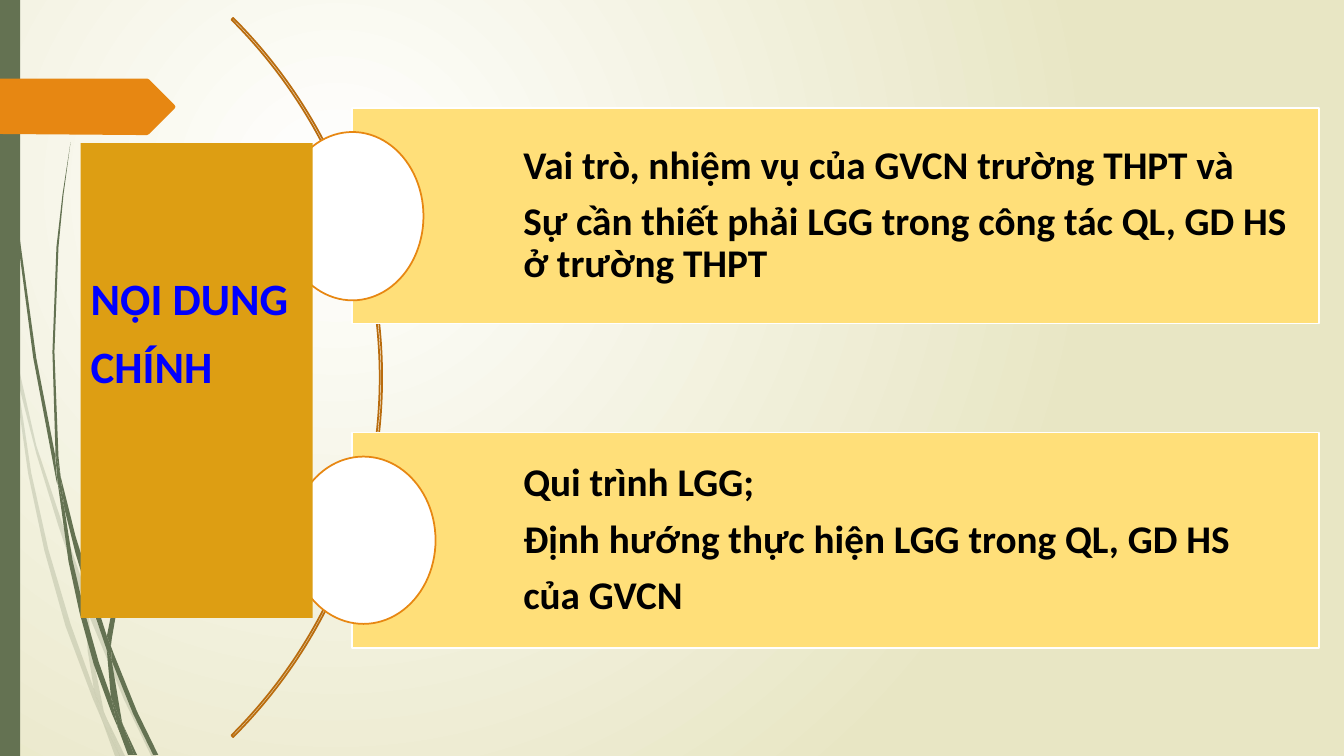
from lxml.etree import SubElement
from pptx import Presentation
from pptx.dml.color import RGBColor
from pptx.enum.shapes import MSO_SHAPE
from pptx.enum.text import MSO_ANCHOR, MSO_AUTO_SIZE, PP_ALIGN
from pptx.oxml.ns import qn
from pptx.util import Inches, Pt

COLORS = {
    "white": "FFFFFF", "cream": "E8E6C4", "green": "647252", "orange": "E78712",
    "arc": "B96C0E", "panel": "FFDF79", "gold": "DD9E13", "black": "000000", "blue": "0000FF",
}
LIGHT_BLADES = [
    [(0.11, 3.5), (0.09, 3.22), (0, 2.82), (0, 2.99), (0.1, 3.44)],
    [(0.58, 5.22), (0.84, 5.99), (0.85, 5.86), (0.62, 5.2), (0.36, 4.42), (0.14, 3.45),
     (0.17, 3.76), (0.36, 4.5)],
    [(0.92, 6.07), (0.88, 5.96), (0.88, 6.1), (1.23, 6.94), (1.5, 7.5), (1.55, 7.5), (1.27, 6.92)],
    [(1.19, 7.5), (1.24, 7.5), (1.05, 7.11)],
    [(0.93, 6.83), (0.7, 6.19), (0.48, 5.45), (0.31, 4.69), (0.17, 3.76), (0.11, 3.5),
     (0.28, 4.7), (0.44, 5.46), (0.65, 6.21), (0.92, 6.93), (1.01, 7.14), (0.99, 7.07)],
    [(0.84, 5.99), (0.87, 6.46), (0.93, 6.83), (0.96, 6.92), (1.05, 7.11), (1.03, 7.06),
     (0.91, 6.46), (0.88, 6.1), (0.88, 6.08)],
    [(0.88, 5.84), (1.1, 4.62), (1.6, 3.49), (2.29, 2.45), (2.68, 1.98), (3.12, 1.54),
     (3.12, 1.53), (2.68, 1.97), (2.28, 2.44), (1.58, 3.48), (1.07, 4.61), (0.85, 5.84),
     (0.85, 5.86), (0.88, 5.96)],
    [(1.01, 7.14), (1.14, 7.5), (1.19, 7.5)],
    [(0.96, 6.92), (0.93, 6.83), (0.99, 7.07), (1.01, 7.14), (1.19, 7.5), (1.05, 7.11)],
]
DARK_BLADES = [
    [(0.07, 1.1), (0.17, 2.33), (0.33, 3.55), (0.56, 4.77), (0.57, 4.81), (0.55, 4.57),
     (0.55, 4.53), (0.36, 3.55), (0.19, 2.32), (0.08, 1.09), (0.05, 0.48), (0.04, 0),
     (0.03, 0), (0.04, 0.48)],
    [(0.88, 5.92), (1.06, 6.45), (1.06, 6.33), (1.06, 6.31), (0.93, 5.9), (0.75, 5.32),
     (0.6, 4.72), (0.64, 5.05), (0.75, 5.49)],
    [(1.13, 6.49), (1.1, 6.41), (1.11, 6.56), (1.32, 7.08), (1.52, 7.49), (1.57, 7.49),
     (1.36, 7.06)],
    [(1.1, 6.91), (0.98, 6.57), (0.84, 6.07), (0.72, 5.56), (0.64, 5.05), (0.57, 4.77),
     (0.68, 5.57), (0.79, 6.08), (0.93, 6.59), (1.11, 7.08), (1.17, 7.22), (1.16, 7.17)],
    [(0.6, 4.72), (0.58, 4.53), (0.54, 3.49), (0.58, 2.45), (0.63, 1.93), (0.7, 1.41),
     (0.62, 1.93), (0.56, 2.45), (0.52, 3.49), (0.55, 4.49)],
    [(1.33, 7.49), (1.36, 7.49), (1.22, 7.19)],
    [(0.57, 4.77), (0.64, 5.05), (0.6, 4.72), (0.55, 4.49), (0.55, 4.53)],
    [(1.11, 6.33), (1.25, 5.52), (1.58, 4.76), (2.05, 4.06), (2.31, 3.74), (2.61, 3.44),
     (2.6, 3.44), (2.31, 3.73), (2.04, 4.05), (1.56, 4.74), (1.22, 5.51), (1.06, 6.31),
     (1.1, 6.41)],
    [(1.17, 7.22), (1.27, 7.49), (1.31, 7.49)],
    [(1.06, 6.45), (1.1, 6.91), (1.16, 7.06), (1.22, 7.19), (1.21, 7.16), (1.11, 6.56),
     (1.09, 6.51)],
    [(1.06, 6.45), (1.09, 6.51), (1.11, 6.56), (1.1, 6.41), (1.06, 6.31)],
    [(1.16, 7.06), (1.1, 6.91), (1.16, 7.17), (1.17, 7.22), (1.3, 7.49), (1.33, 7.49),
     (1.22, 7.19)],
]
ARROW = [(1.73, 1.08), (1.48, 1.33), (1.46, 1.34), (1.36, 1.34), (0, 1.33), (0, 0.78),
         (1.46, 0.78), (1.48, 0.79), (1.73, 1.04), (1.74, 1.06)]
TOPICS = [
    (["Vai trò, nhiệm vụ của GVCN trường THPT và",
      "Sự cần thiết phải LGG trong công tác QL, GD HS ở trường THPT"], 2.79, 1.41, 1.67),
    (["Qui trình LGG;", "Định hướng thực hiện LGG trong QL, GD HS", "của GVCN"],
     2.89, 1.43, 1.66),
]


def rgb(name):
    return RGBColor.from_string(COLORS[name])


def paint(sp, fill=None, line=None):
    sp.shadow.inherit = False
    if fill:
        sp.fill.solid()
        sp.fill.fore_color.rgb = rgb(fill)
    else:
        sp.fill.background()
    if line:
        sp.line.color.rgb = rgb(line)
        sp.line.width = Pt(1.25)
    else:
        sp.line.fill.background()


def add_block(s, kind, x, y, w, h, fill=None, line=None, adjust=()):
    sp = s.shapes.add_shape(kind, Inches(x), Inches(y), Inches(w), Inches(h))
    for i, value in enumerate(adjust):
        sp.adjustments[i] = value
    paint(sp, fill, line)
    return sp


def add_outline(s, points, fill, alpha=None):
    corners = [(Inches(x), Inches(y)) for x, y in points]
    builder = s.shapes.build_freeform(*corners[0])
    builder.add_line_segments(corners[1:], close=True)
    sp = builder.convert_to_shape()
    paint(sp, fill)
    if alpha:
        for clr in sp.element.spPr.iter(qn("a:srgbClr")):
            SubElement(clr, qn("a:alpha"), val=str(alpha * 1000))


def write(sp, lines, size, color, anchor, margins, spacing=1.0, before=0, after=0):
    tf = sp.text_frame
    tf.word_wrap = True
    tf.auto_size = MSO_AUTO_SIZE.NONE
    tf.vertical_anchor = anchor
    tf.margin_left, tf.margin_top, tf.margin_right, tf.margin_bottom = map(Inches, margins)
    for i, text in enumerate(lines):
        p = tf.add_paragraph() if i else tf.paragraphs[0]
        p.alignment = PP_ALIGN.LEFT
        p.line_spacing = spacing
        p.space_before = Pt(before if i else 0)
        p.space_after = Pt(after)
        r = p.add_run()
        r.text = text
        r.font.name = "Calibri"
        r.font.size = Pt(size)
        r.font.bold = True
        r.font.color.rgb = rgb(color)


def set_background(s):
    fill = s.background.fill
    fill.gradient()
    for stop, name in zip(fill.gradient_stops, ("white", "cream")):
        stop.color.rgb = rgb(name)
    grad = next(s.element.iter(qn("a:gradFill")))
    grad.remove(grad.find(qn("a:lin")))
    circle = SubElement(grad, qn("a:path"), {"path": "circle"})
    SubElement(circle, qn("a:fillToRect"), l="50000", t="50000", r="100000", b="100000")


def add_topic(s, y, lines, circle_x, circle_w, circle_h):
    panel = add_block(s, MSO_SHAPE.RECTANGLE, 3.49, y, 9.59, 2.14, "panel", "white")
    write(panel, lines, 28, "black", MSO_ANCHOR.MIDDLE, (1.7, 0.08, 0.08, 0.08),
          spacing=0.9, after=9.8)
    add_block(s, MSO_SHAPE.OVAL, circle_x, y + 0.24, circle_w, circle_h, "white", "orange")


def add_title(s):
    sp = s.shapes.title
    sp.left, sp.top, sp.width, sp.height = map(Inches, (0.8, 1.42, 2.3, 4.71))
    sp.fill.solid()
    sp.fill.fore_color.rgb = rgb("gold")
    write(sp, ["NỘI DUNG", "CHÍNH"], 32, "blue", MSO_ANCHOR.TOP, (0.1, 1.27, 0.1, 0.05),
          before=10)
    s.shapes.element.append(sp.element)


def main():
    prs = Presentation()
    prs.slide_width, prs.slide_height = Inches(13.33), Inches(7.5)
    s = prs.slides.add_slide(prs.slide_layouts[5])
    set_background(s)
    for points in LIGHT_BLADES:
        add_outline(s, points, "green", alpha=20)
    for points in DARK_BLADES:
        add_outline(s, points, "green")
    add_block(s, MSO_SHAPE.RECTANGLE, 0, 0, 0.2, 7.5, "green")
    add_outline(s, ARROW, "orange")
    add_block(s, MSO_SHAPE.BLOCK_ARC, -6.3, -1.3, 10.09, 10.09, line="arc",
              adjust=[189, 27, 0.0024])
    for i, topic in enumerate(TOPICS):
        add_topic(s, 1.07 + 3.22 * i, *topic)
    add_title(s)
    prs.save("out.pptx")


if __name__ == "__main__":
    main()
